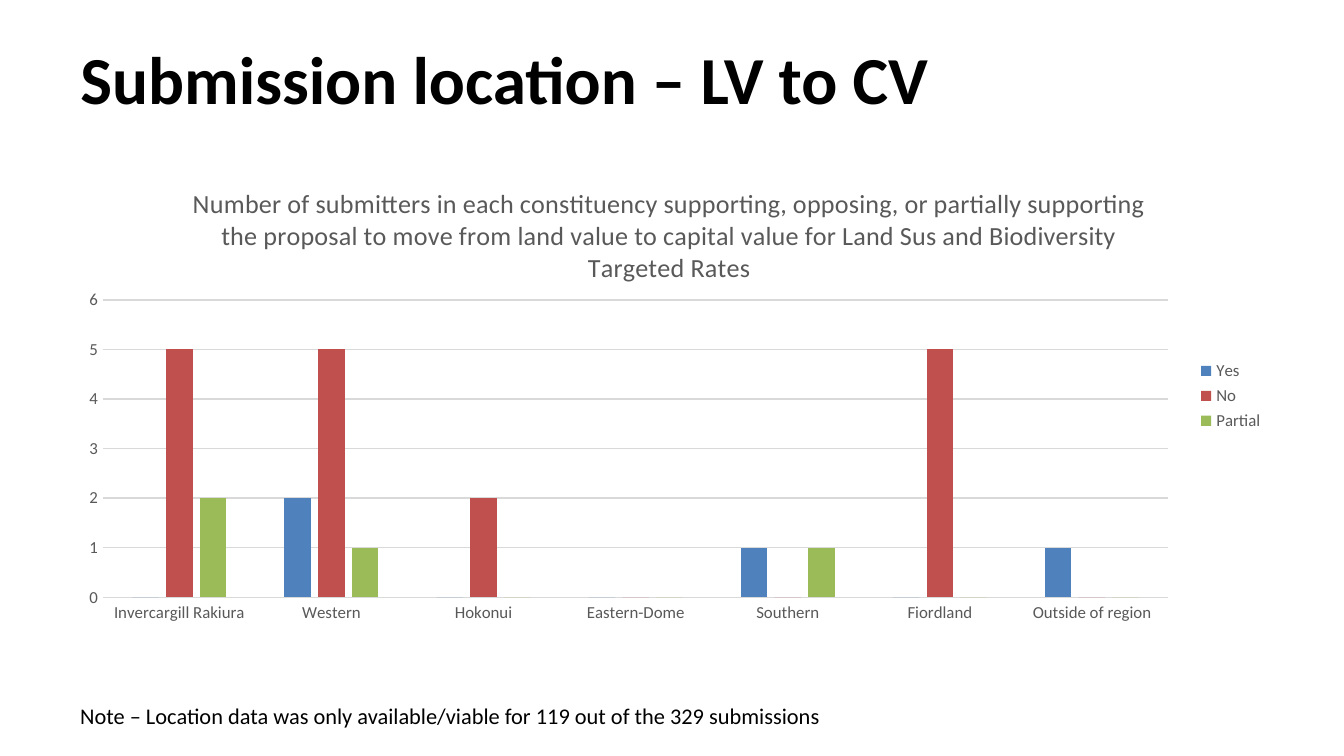
from lxml import etree
from pptx import Presentation
from pptx import util as u
from pptx.chart.data import CategoryChartData
from pptx.dml.color import RGBColor
from pptx.enum import chart as ch
from pptx.enum import text as t
from pptx.oxml.ns import qn

PX = 914400 / 134.4
FONT = "Calibri"
HUES = {"ink": "000000", "grey": "595959", "grid": "D9D9D9",
        "Yes": "4F81BD", "No": "C0504D", "Partial": "9BBB59"}
AREAS = ["Invercargill Rakiura", "Western", "Hokonui", "Eastern-Dome",
         "Southern", "Fiordland", "Outside of region"]
VOTES = {"Yes": [0, 2, 0, 0, 1, 0, 1],
         "No": [5, 5, 2, 0, 0, 5, 0],
         "Partial": [2, 1, 0, 0, 1, 0, 0]}
HEAD = ("Number of submitters in each constituency supporting, opposing, or "
        "partially supporting the proposal to move from land value to capital "
        "value for Land Sus and Biodiversity Targeted Rates")


def emu(*px):
    return [u.Emu(round(n * PX)) for n in px]


def hue(name):
    return RGBColor.from_string(HUES[name])


def style(font, size, name, bold=False):
    font.name, font.size, font.bold = FONT, u.Pt(size), bold
    font.color.rgb = hue(name)


def add_run(para, words, size, name, bold=False):
    run = para.add_run()
    run.text = words
    style(run.font, size, name, bold)


def add_title(slide, box):
    title = slide.shapes.title
    title.left, title.top, title.width, title.height = emu(*box)
    frame = title.text_frame
    frame.vertical_anchor = t.MSO_ANCHOR.MIDDLE
    para = frame.paragraphs[0]
    para.alignment = t.PP_ALIGN.LEFT
    add_run(para, "Submission location – LV to CV", 36, "ink", True)


def place(part, before, **spots):
    """Give a chart part a manual layout in fractions of the chart."""
    for old in part.findall(qn("c:layout")):
        part.remove(old)
    layout = etree.Element(qn("c:layout"))
    manual = etree.SubElement(layout, qn("c:manualLayout"))
    if "w" in spots:
        etree.SubElement(manual, qn("c:layoutTarget")).set("val", "inner")
    for side in "xy":
        etree.SubElement(manual, qn(f"c:{side}Mode")).set("val", "edge")
    for key, val in spots.items():
        etree.SubElement(manual, qn(f"c:{key}")).set("val", str(val))
    part.insert(before, layout)


def add_votes(slide, box):
    data = CategoryChartData()
    data.categories = AREAS
    for name, vals in VOTES.items():
        data.add_series(name, vals)
    kind = ch.XL_CHART_TYPE.COLUMN_CLUSTERED
    chart = slide.shapes.add_chart(kind, *emu(*box), data).chart
    style(chart.font, 10, "ink")

    add_run(chart.chart_title.text_frame.paragraphs[0], HEAD, 14, "grey")
    chart.chart_title.include_in_layout = False
    chart.has_legend = True
    chart.legend.position = ch.XL_LEGEND_POSITION.RIGHT
    chart.legend.include_in_layout = False
    style(chart.legend.font, 9, "grey")

    plot = chart.plots[0]
    plot.gap_width, plot.overlap, plot.vary_by_categories = 219, -27, False
    for series in plot.series:
        series.format.fill.solid()
        series.format.fill.fore_color.rgb = hue(series.name)
        series.invert_if_negative = False

    cats, vals = chart.category_axis, chart.value_axis
    for axis in (cats, vals):
        axis.major_tick_mark = axis.minor_tick_mark = ch.XL_TICK_MARK.NONE
        style(axis.tick_labels.font, 9, "grey")
    vals.minimum_scale, vals.maximum_scale, vals.major_unit = 0, 6, 1
    vals.format.line.fill.background()
    vals.has_major_gridlines = True
    for line in (cats.format.line, vals.major_gridlines.format.line):
        line.color.rgb = hue("grid")
        line.width = u.Pt(0.75)

    tree = chart.element.chart
    place(tree.find(qn("c:title")), 1, x=0.1, y=0.05)
    place(tree.plotArea, 0, x=0.03, y=0.3, w=0.88, h=0.62)


def add_note(slide, box):
    frame = slide.shapes.add_textbox(*emu(*box)).text_frame
    frame.word_wrap = False
    frame.auto_size = t.MSO_AUTO_SIZE.SHAPE_TO_FIT_TEXT
    add_run(frame.paragraphs[0], "Note – Location data was only available/viable "
            "for 119 out of the 329 submissions", 12, "ink")


def main():
    deck = Presentation()
    deck.slide_width, deck.slide_height = emu(1344, 756)
    slide = deck.slides.add_slide(deck.slide_layouts[5])
    add_title(slide, (67, 15, 997, 126))
    add_votes(slide, (67, 156, 1210, 480))
    add_note(slide, (67, 696, 777, 40))
    deck.save("out.pptx")


if __name__ == "__main__":
    main()
